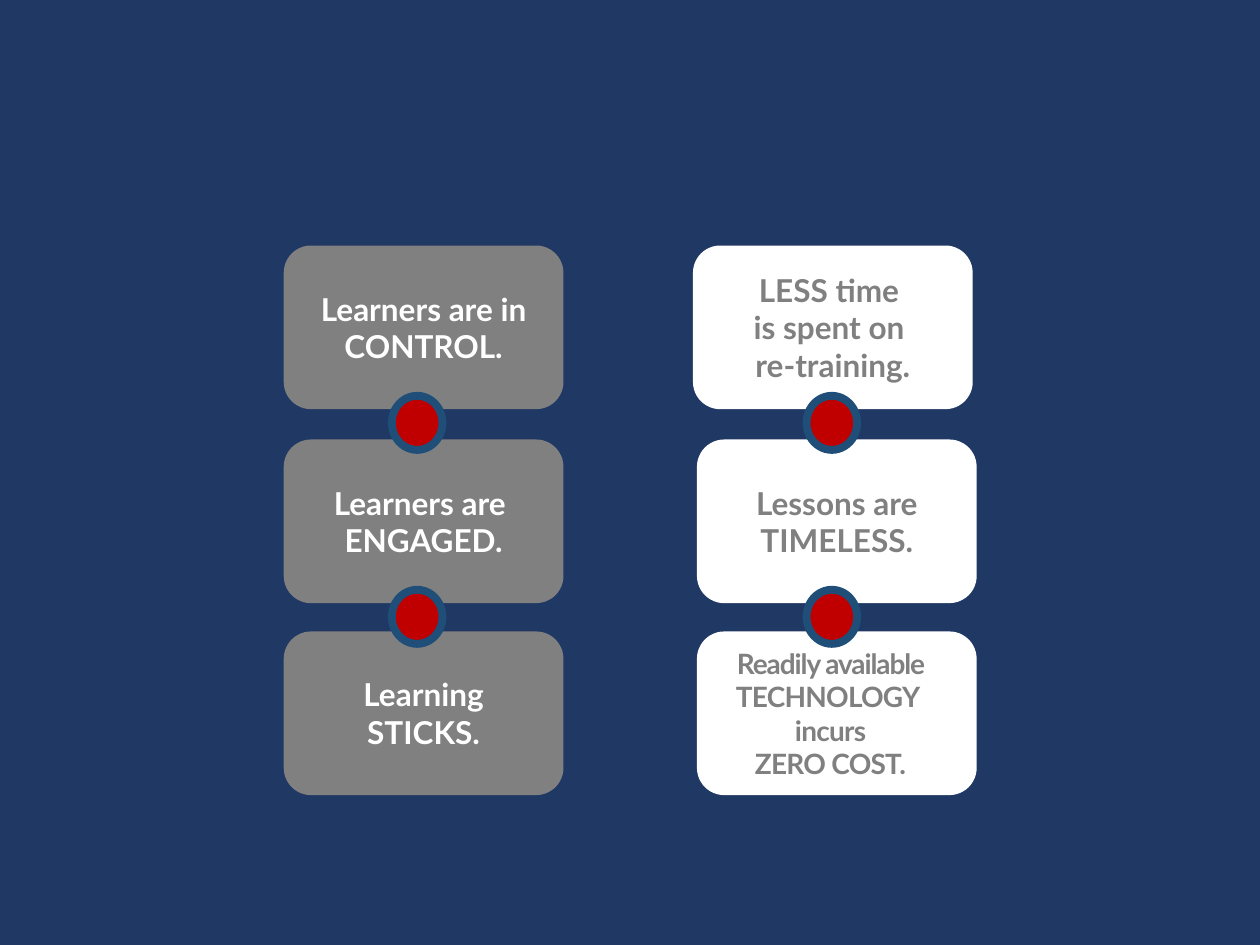
import pptx
import pptx.util
import pptx.dml.color
import pptx.enum.shapes
import pptx.enum.text

Cm, Pt = pptx.util.Cm, pptx.util.Pt
RGBColor = pptx.dml.color.RGBColor
MSO_SHAPE = pptx.enum.shapes.MSO_SHAPE

NAVY = RGBColor(0x20, 0x38, 0x64)
GREY = RGBColor(0x80, 0x80, 0x80)
WHITE = RGBColor(0xFF, 0xFF, 0xFF)
RED = RGBColor(0xC0, 0x00, 0x00)
BLUE = RGBColor(0x1F, 0x4E, 0x79)

CARD_W, CARD_H = 5.64, 3.3
CARD_TOPS = (4.95, 8.86, 12.73)
DOT_W, DOT_H = 1.02, 1.09
DOT_TOPS = (7.98, 11.89)

LEARNERS = (
    (5.72, [["Learners are in CONTROL."]], {}),
    (5.72, [["Learners are "], ["ENGAGED."]], {}),
    (5.72, [["Learning STICKS."]], {}),
)
TIGHT = {
    "size": 16,
    "spacing": (-60, -40),
    "frame": {"margin_left": 0, "margin_top": 0, "margin_right": Cm(0.25), "margin_bottom": 0},
}
LESSONS = (
    (13.97, [["LESS time "], ["is spent on "], ["re-training."]], {}),
    (14.05, [["Lessons are TIMELESS."]], {}),
    (14.05, [["Readily available ", "TECHNOLOGY "], ["incurs"], ["ZERO COST."]], TIGHT),
)
COLUMNS = ((LEARNERS, GREY, WHITE, 7.9), (LESSONS, WHITE, GREY, 16.26))


class Deck:
    """Holds the text style and the current slide, and draws its cards and dots."""

    def __init__(self, prs):
        self.font = {"name": "Lato", "bold": True}
        self.s = prs.slides.add_slide(prs.slide_layouts[6])
        self.s.background.fill.solid()
        self.s.background.fill.fore_color.rgb = NAVY

    def shape(self, kind, left, top, width, height, fill):
        sp = self.s.shapes.add_shape(kind, Cm(left), Cm(top), Cm(width), Cm(height))
        sp.shadow.inherit = False
        sp.fill.solid()
        sp.fill.fore_color.rgb = fill
        sp.line.fill.background()
        return sp

    def card(self, left, top, fill, color, paragraphs, size=18, spacing=(), frame=None):
        sp = self.shape(MSO_SHAPE.ROUNDED_RECTANGLE, left, top, CARD_W, CARD_H, fill)
        tf = sp.text_frame
        formats = {
            "word_wrap": True,
            "vertical_anchor": pptx.enum.text.MSO_ANCHOR.MIDDLE,
            **(frame or {}),
        }
        for name, value in formats.items():
            setattr(tf, name, value)
        count = 0
        for i, texts in enumerate(paragraphs):
            p = tf.add_paragraph() if i else tf.paragraphs[0]
            p.alignment = pptx.enum.text.PP_ALIGN.CENTER
            for text in texts:
                r = p.add_run()
                r.text = text
                for name, value in {**self.font, "size": Pt(size)}.items():
                    setattr(r.font, name, value)
                r.font.color.rgb = color
                if spacing:
                    gap = spacing[min(count, len(spacing) - 1)]
                    r._r.get_or_add_rPr().set("spc", str(gap))
                count += 1

    def dot(self, left, top):
        sp = self.shape(MSO_SHAPE.OVAL, left, top, DOT_W, DOT_H, RED)
        sp.line.color.rgb = BLUE
        sp.line.width = Pt(4.5)


def main():
    prs = pptx.Presentation()
    prs.slide_width, prs.slide_height = Cm(25.4), Cm(19.05)
    deck = Deck(prs)
    for cards, fill, color, dot_left in COLUMNS:
        for top, (left, paragraphs, style) in zip(CARD_TOPS, cards):
            deck.card(left, top, fill, color, paragraphs, **style)
        for top in DOT_TOPS:
            deck.dot(dot_left, top)
    prs.save("out.pptx")


if __name__ == "__main__":
    main()
